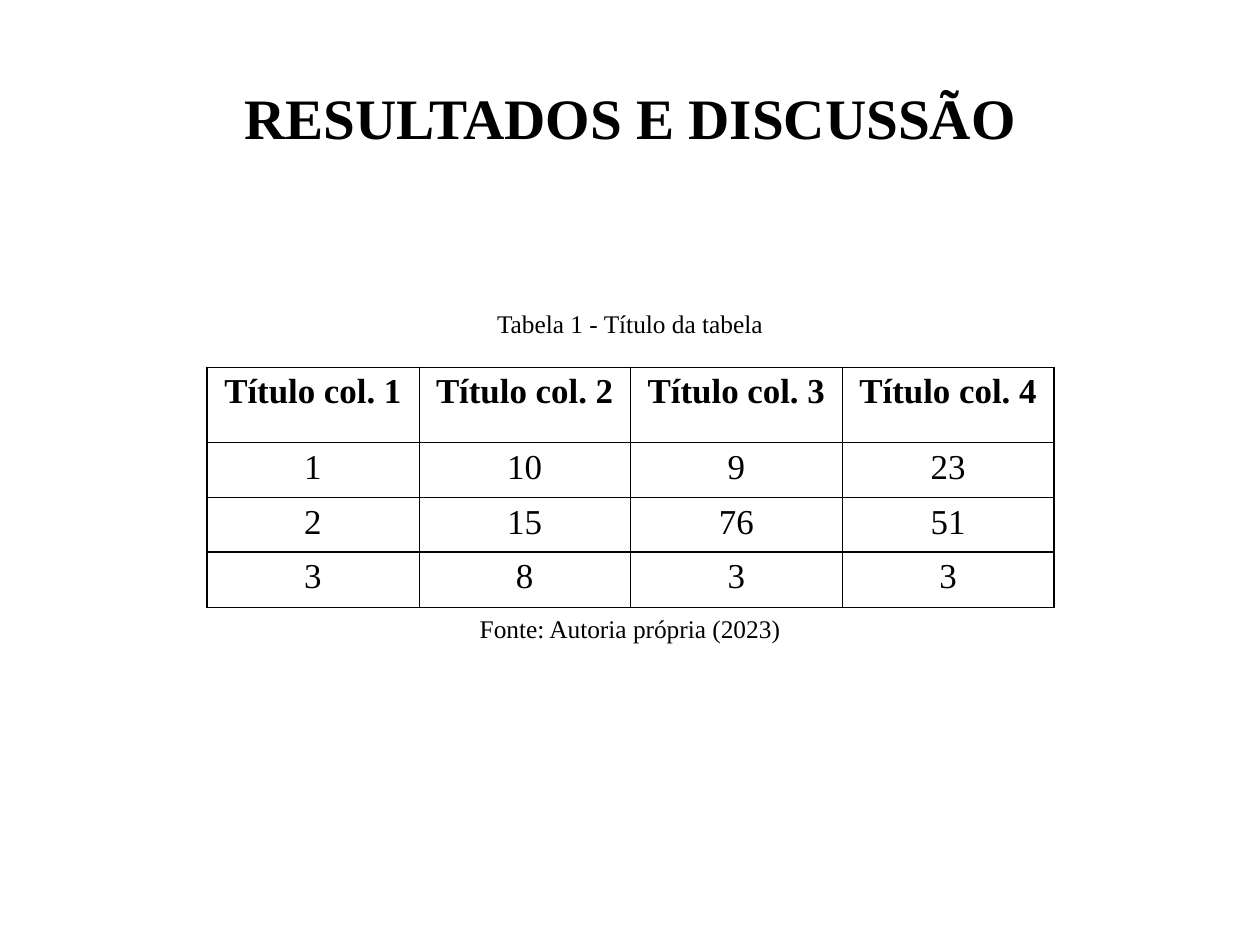
import lxml.etree
import pptx
import pptx.dml.color
import pptx.enum.text
import pptx.oxml.ns
import pptx.util

Cm = pptx.util.Cm
Pt = pptx.util.Pt

FONT = "Times New Roman"
BLACK = "000000"
HAIRLINE, RULE = Pt(0.06), Pt(0.96)
ROWS = [
    ["Título col. 1", "Título col. 2", "Título col. 3", "Título col. 4"],
    ["1", "10", "9", "23"],
    ["2", "15", "76", "51"],
    ["3", "8", "3", "3"],
]
HEADER_HEIGHT, ROW_HEIGHT = 1.68, 1.22


def color(value):
    return pptx.dml.color.RGBColor.from_string(value)


def write(frame, text, size, bold=False):
    """Put one centred line of text in a text frame."""
    para = frame.paragraphs[0]
    para.alignment = pptx.enum.text.PP_ALIGN.CENTER
    span = para.add_run()
    span.text = text
    span.font.name = FONT
    span.font.size = Pt(size)
    span.font.bold = bold
    span.font.color.rgb = color(BLACK)


def set_title(slide, text, left, top, width, height):
    title = slide.shapes.title
    title.left, title.top = Cm(left), Cm(top)
    title.width, title.height = Cm(width), Cm(height)
    frame = title.text_frame
    frame.margin_left = frame.margin_right = 0
    frame.margin_top = frame.margin_bottom = 0
    frame.vertical_anchor = pptx.enum.text.MSO_ANCHOR.MIDDLE
    write(frame, text, 36, bold=True)


def add_caption(slide, text, left, top, width, height):
    box = slide.shapes.add_textbox(Cm(left), Cm(top), Cm(width), Cm(height))
    box.text_frame.word_wrap = True
    write(box.text_frame, text, 16)


def set_borders(cell, widths):
    """Draw the left, right, top and bottom borders, in that order."""
    properties = cell._tc.get_or_add_tcPr()
    qn = pptx.oxml.ns.qn
    for side, width in zip("LRTB", widths):
        line = lxml.etree.SubElement(properties, qn(f"a:ln{side}"), w=str(int(width)))
        fill = lxml.etree.SubElement(line, qn("a:solidFill"))
        lxml.etree.SubElement(fill, qn("a:srgbClr"), val=BLACK)


def add_results_table(slide, left, top, width):
    row_count, column_count = len(ROWS), len(ROWS[0])
    heights = [HEADER_HEIGHT] + [ROW_HEIGHT] * (row_count - 1)
    table = slide.shapes.add_table(
        row_count, column_count, Cm(left), Cm(top), Cm(width), Cm(sum(heights))
    ).table
    table.first_row = True
    table.horz_banding = False
    for column in table.columns:
        column.width = Cm(width / column_count)
    for r, (values, height) in enumerate(zip(ROWS, heights)):
        table.rows[r].height = Cm(height)
        for c, value in enumerate(values):
            cell = table.cell(r, c)
            set_borders(cell, [
                RULE if c == 0 else HAIRLINE,
                RULE if c == column_count - 1 else HAIRLINE,
                RULE if r >= 2 else HAIRLINE,
                RULE if r in (0, 2) else HAIRLINE,
            ])
            cell.fill.background()
            write(cell.text_frame, value, 22, bold=r == 0)


def main():
    deck = pptx.Presentation()
    deck.slide_width, deck.slide_height = Cm(28), Cm(21)
    slide = deck.slides.add_slide(deck.slide_layouts[5])
    set_title(slide, "RESULTADOS E DISCUSSÃO", 1.4, 0.84, 25.2, 3.5)
    add_caption(slide, "Tabela 1 - Título da tabela", 10.2, 6.73, 7.6, 1.19)
    add_results_table(slide, 4.6, 8.15, 18.82)
    add_caption(slide, "Fonte: Autoria própria (2023)", 10.2, 13.51, 7.6, 1.19)
    deck.save("out.pptx")


if __name__ == "__main__":
    main()
